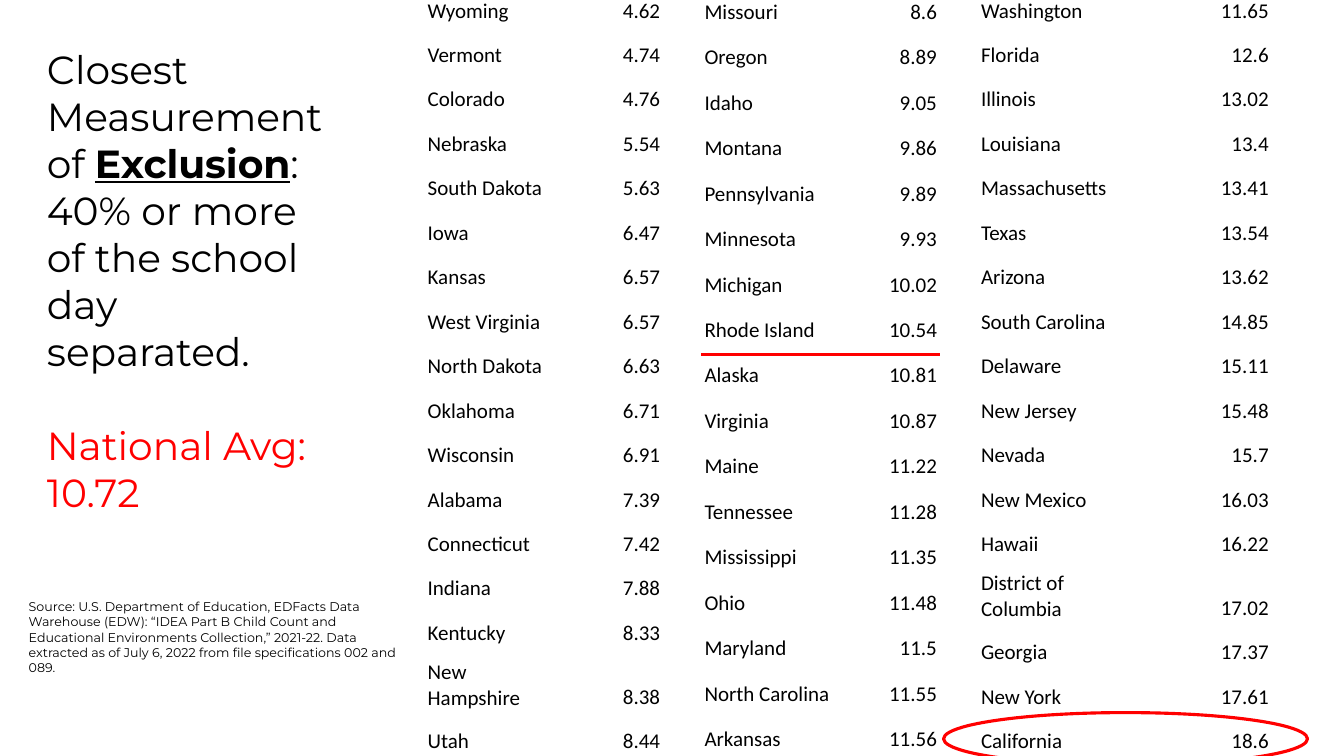
from pptx import Presentation
from pptx.dml.color import RGBColor
from pptx.enum.shapes import MSO_CONNECTOR, MSO_SHAPE
from pptx.enum.text import MSO_ANCHOR, PP_ALIGN
from pptx.oxml.ns import qn
from pptx.util import Pt
from lxml import etree

LINE = MSO_CONNECTOR.STRAIGHT
OVAL = MSO_SHAPE.OVAL
BOTTOM = MSO_ANCHOR.BOTTOM
LEFT, RIGHT = PP_ALIGN.LEFT, PP_ALIGN.RIGHT

theme = {
    "ink": RGBColor(0, 0, 0),
    "red": RGBColor(255, 0, 0),
    "head": "Montserrat",
    "body": "Calibri",
    "title": Pt(28),
    "cell": Pt(15),
    "note": Pt(9),
    "rule": Pt(2.25),
}

deck = Presentation()
deck.slide_width, deck.slide_height = Pt(960), Pt(540)
slide = deck.slides.add_slide(deck.slide_layouts[6])


def style(para, face, size, color):
    para.font.name = theme[face]
    para.font.size = theme[size]
    para.font.color.rgb = theme[color]


def add_box(x, y, w, h):
    frame = slide.shapes.add_textbox(Pt(x), Pt(y), Pt(w), Pt(h)).text_frame
    frame.word_wrap = True
    frame.margin_left = frame.margin_right = Pt(9)
    frame.margin_top = frame.margin_bottom = Pt(9)
    return frame


title = add_box(24.5, 23, 218, 315)
lead = title.paragraphs[0]
style(lead, "head", "title", "ink")
lead.add_run().text = "Closest Measurement of "
key = lead.add_run()
key.text = "Exclusion"
key.font.bold = key.font.underline = True
lead.add_run().text = ": 40% or more of the school day separated."
mean = title.add_paragraph()
mean.text = "National Avg: 10.72"
mean.space_before = Pt(33.5)
style(mean, "head", "title", "red")

low = [
    ("Wyoming", "4.62"), ("Vermont", "4.74"), ("Colorado", "4.76"),
    ("Nebraska", "5.54"), ("South Dakota", "5.63"), ("Iowa", "6.47"),
    ("Kansas", "6.57"), ("West Virginia", "6.57"), ("North Dakota", "6.63"),
    ("Oklahoma", "6.71"), ("Wisconsin", "6.91"), ("Alabama", "7.39"),
    ("Connecticut", "7.42"), ("Indiana", "7.88"), ("Kentucky", "8.33"),
    ("New Hampshire", "8.38"), ("Utah", "8.44"),
]
middle = [
    ("Missouri", "8.6"), ("Oregon", "8.89"), ("Idaho", "9.05"),
    ("Montana", "9.86"), ("Pennsylvania", "9.89"), ("Minnesota", "9.93"),
    ("Michigan", "10.02"), ("Rhode Island", "10.54"), ("Alaska", "10.81"),
    ("Virginia", "10.87"), ("Maine", "11.22"), ("Tennessee", "11.28"),
    ("Mississippi", "11.35"), ("Ohio", "11.48"), ("Maryland", "11.5"),
    ("North Carolina", "11.55"), ("Arkansas", "11.56"),
]
high = [
    ("Washington", "11.65"), ("Florida", "12.6"), ("Illinois", "13.02"),
    ("Louisiana", "13.4"), ("Massachusetts", "13.41"), ("Texas", "13.54"),
    ("Arizona", "13.62"), ("South Carolina", "14.85"), ("Delaware", "15.11"),
    ("New Jersey", "15.48"), ("Nevada", "15.7"), ("New Mexico", "16.03"),
    ("Hawaii", "16.22"), ("District of Columbia", "17.02"),
    ("Georgia", "17.37"), ("New York", "17.61"), ("California", "18.6"),
]
groups = [
    (low, 304.75, (97, 70.5), 31.75),
    (middle, 502.5, (97, 70.5), 32.5),
    (high, 700, (120.5, 86.5), 31.75),
]
for states, x, widths, pitch in groups:
    count = len(states)
    table = slide.shapes.add_table(
        count, 2, Pt(x), Pt(-5.75), Pt(sum(widths)), Pt(count * pitch)).table
    table.first_row = table.horz_banding = False
    for col, width in zip(table.columns, widths):
        col.width = Pt(width)
    for row, pair in zip(table.rows, states):
        row.height = Pt(pitch)
        for cell, text, align, space in zip(
                row.cells, pair, (LEFT, RIGHT), (1.0, 1.15)):
            cell.fill.background()
            cell.vertical_anchor = BOTTOM
            cell.margin_left = cell.margin_right = cell.margin_top = Pt(0.75)
            cell.margin_bottom = Pt(9)
            para = cell.text_frame.paragraphs[0]
            para.text = text
            para.alignment = align
            para.line_spacing = space
            style(para, "body", "cell", "ink")

rule = slide.shapes.add_connector(LINE, Pt(501), Pt(253.5), Pt(671.5), Pt(253.5))
etree.SubElement(rule._element.spPr, qn("a:effectLst"))
ring = slide.shapes.add_shape(OVAL, Pt(674), Pt(509), Pt(260), Pt(37.5))
ring.shadow.inherit = False
ring.fill.background()
for mark in (rule, ring):
    mark.line.color.rgb = theme["red"]
    mark.line.width = theme["rule"]

note = add_box(11.5, 419, 284.5, 74).paragraphs[0]
note.text = (
    "Source: U.S. Department of Education, EDFacts Data Warehouse (EDW): "
    "“IDEA Part B Child Count and Educational Environments Collection,” "
    "2021-22. Data extracted as of July 6, 2022 from file specifications "
    "002 and 089.")
style(note, "head", "note", "ink")

deck.save("out.pptx")
